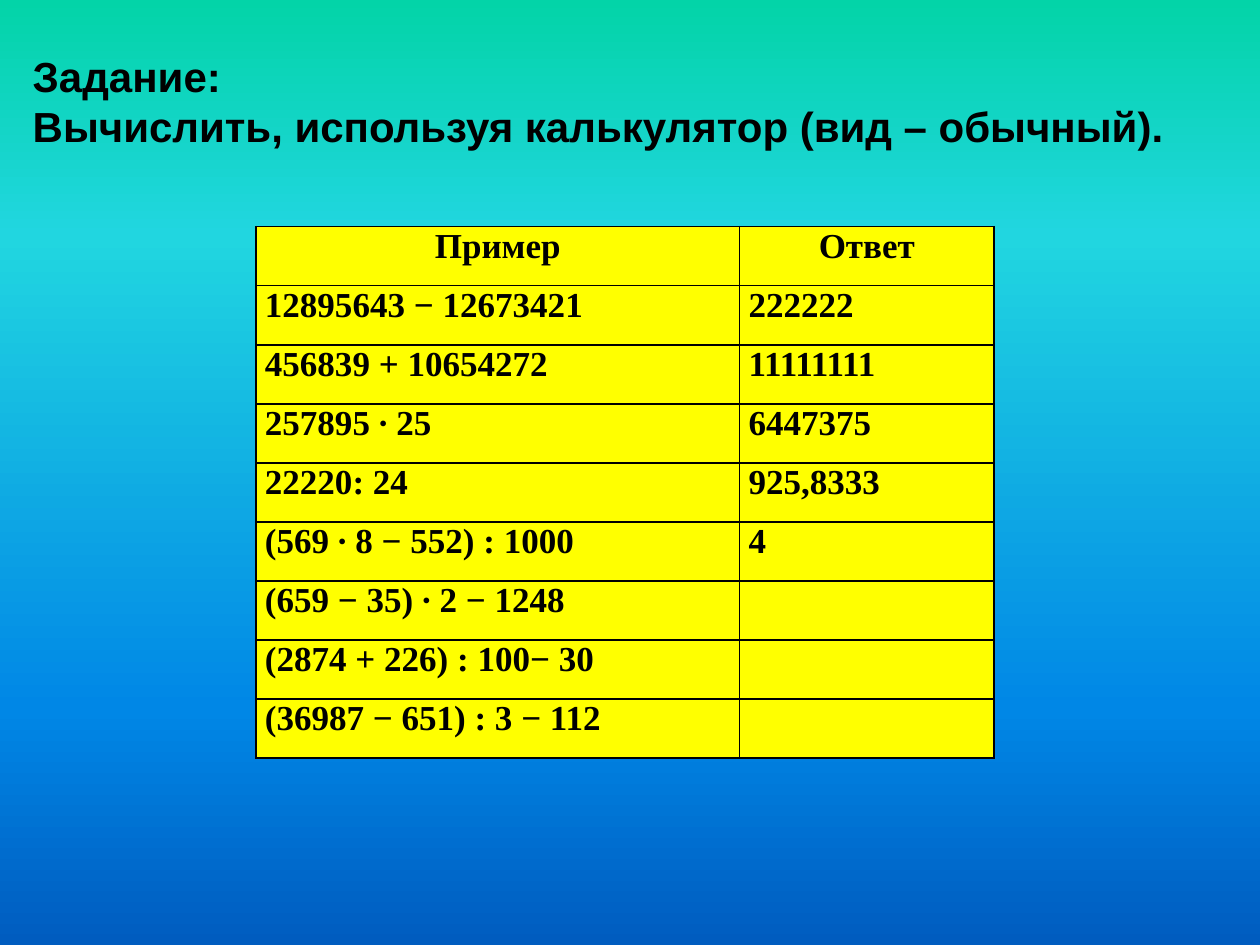
from lxml.etree import SubElement
from pptx import Presentation
from pptx.dml.color import RGBColor
from pptx.enum.text import MSO_ANCHOR, PP_ALIGN
from pptx.oxml.ns import qn
from pptx.util import Cm, Pt

GRADIENT = [(0, "03D4A8"), (25, "21D6E0"), (75, "0087E6"), (100, "005CBF")]
TASK = "Задание:\nВычислить, используя калькулятор (вид – обычный)."
ROWS = [
    ("Пример", "Ответ"),
    ("12895643 − 12673421", "222222"),
    ("456839 + 10654272", "11111111"),
    ("257895 ∙ 25", "6447375"),
    ("22220: 24", "925,8333"),
    ("(569 ∙ 8 − 552) : 1000", "4"),
    ("(659 − 35) ∙ 2 − 1248", ""),
    ("(2874 + 226) : 100− 30", ""),
    ("(36987 − 651) : 3 − 112", ""),
]
COL_WIDTHS = [Cm(9.75), Cm(5.13)]
ROW_HEIGHT = Cm(1.19)


def color(hex_value):
    return RGBColor.from_string(hex_value)


def format_text(tf, font, size, align):
    for p in tf.paragraphs:
        p.alignment = align
        for r in p.runs:
            r.font.name = font
            r.font.size = Pt(size)
            r.font.bold = True
            r.font.color.rgb = color("000000")


def set_background(s, stops):
    fill = s.background.fill
    fill.gradient()
    fill.gradient_angle = 270
    gs_list = next(s.element.iter(qn("a:gsLst")))
    for gs in list(gs_list):
        gs_list.remove(gs)
    for position, hex_value in stops:
        gs = SubElement(gs_list, qn("a:gs"), pos=str(position * 1000))
        SubElement(gs, qn("a:srgbClr"), val=hex_value)


def add_task(s):
    sp = s.shapes.add_textbox(Cm(0.41), Cm(0.79), Cm(24), Cm(3.33))
    tf = sp.text_frame
    tf.word_wrap = True
    tf.vertical_anchor = MSO_ANCHOR.TOP
    tf.margin_top = Cm(0.23)
    tf.text = TASK
    format_text(tf, "Arial", 24, PP_ALIGN.LEFT)


def set_borders(cell, hex_value, width):
    """Draw all four sides; the lines must precede the fill in tcPr."""
    tc_pr = cell._tc.get_or_add_tcPr()
    for i, side in enumerate(("a:lnL", "a:lnR", "a:lnT", "a:lnB")):
        ln = SubElement(tc_pr, qn(side), w=str(Pt(width)))
        SubElement(SubElement(ln, qn("a:solidFill")), qn("a:srgbClr"), val=hex_value)
        tc_pr.insert(i, ln)


def add_examples_table(s):
    frame = s.shapes.add_table(len(ROWS), len(COL_WIDTHS), Cm(5.16), Cm(4.57),
                               sum(COL_WIDTHS), ROW_HEIGHT * len(ROWS))
    table = frame.table
    for column, width in zip(table.columns, COL_WIDTHS):
        column.width = width
    for i, values in enumerate(ROWS):
        table.rows[i].height = ROW_HEIGHT
        for j, value in enumerate(values):
            cell = table.cell(i, j)
            cell.margin_left = cell.margin_right = Cm(0.18)
            cell.margin_top = cell.margin_bottom = 0
            cell.fill.solid()
            cell.fill.fore_color.rgb = color("FFFF00")
            set_borders(cell, "000000", 1)
            cell.text_frame.text = value
            align = PP_ALIGN.CENTER if i == 0 else PP_ALIGN.LEFT
            format_text(cell.text_frame, "Times New Roman", 20, align)


def main():
    prs = Presentation()
    prs.slide_width, prs.slide_height = Cm(25.4), Cm(19.05)
    s = prs.slides.add_slide(prs.slide_layouts[6])
    set_background(s, GRADIENT)
    add_examples_table(s)
    add_task(s)
    prs.save("out.pptx")


if __name__ == "__main__":
    main()
